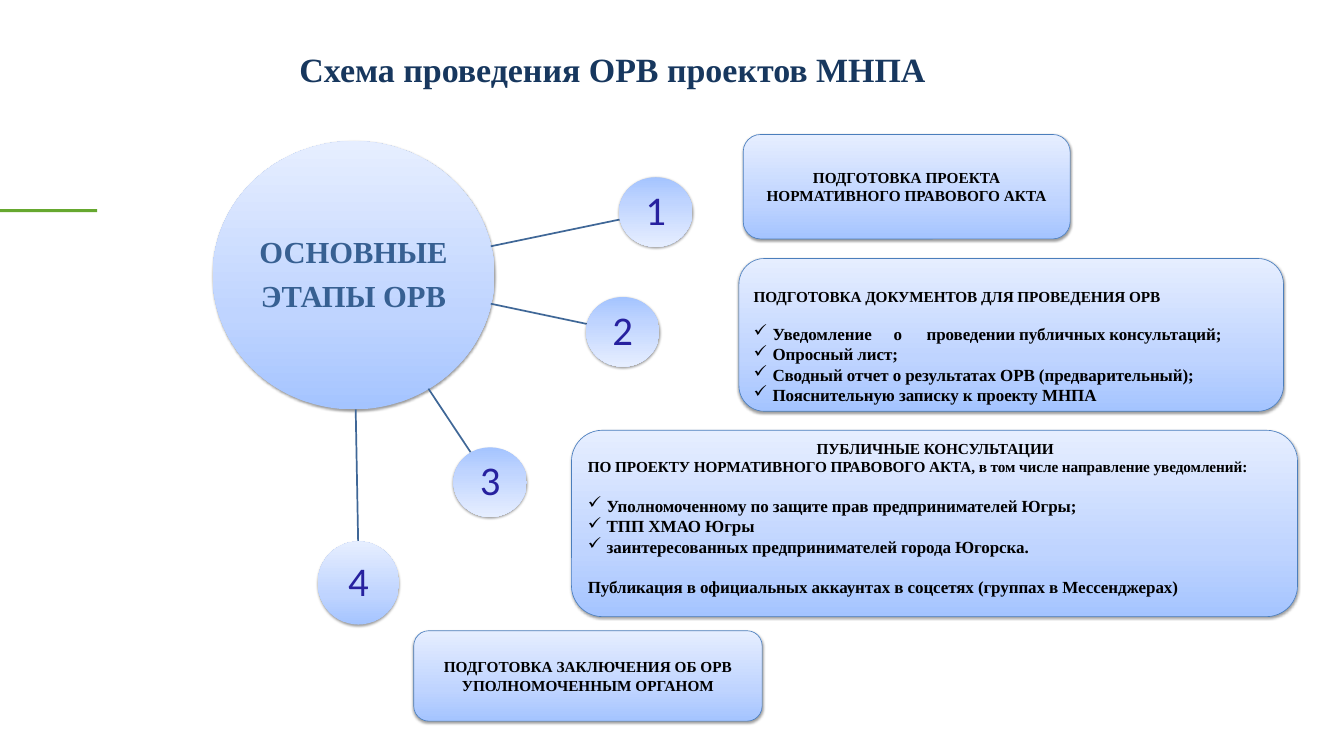
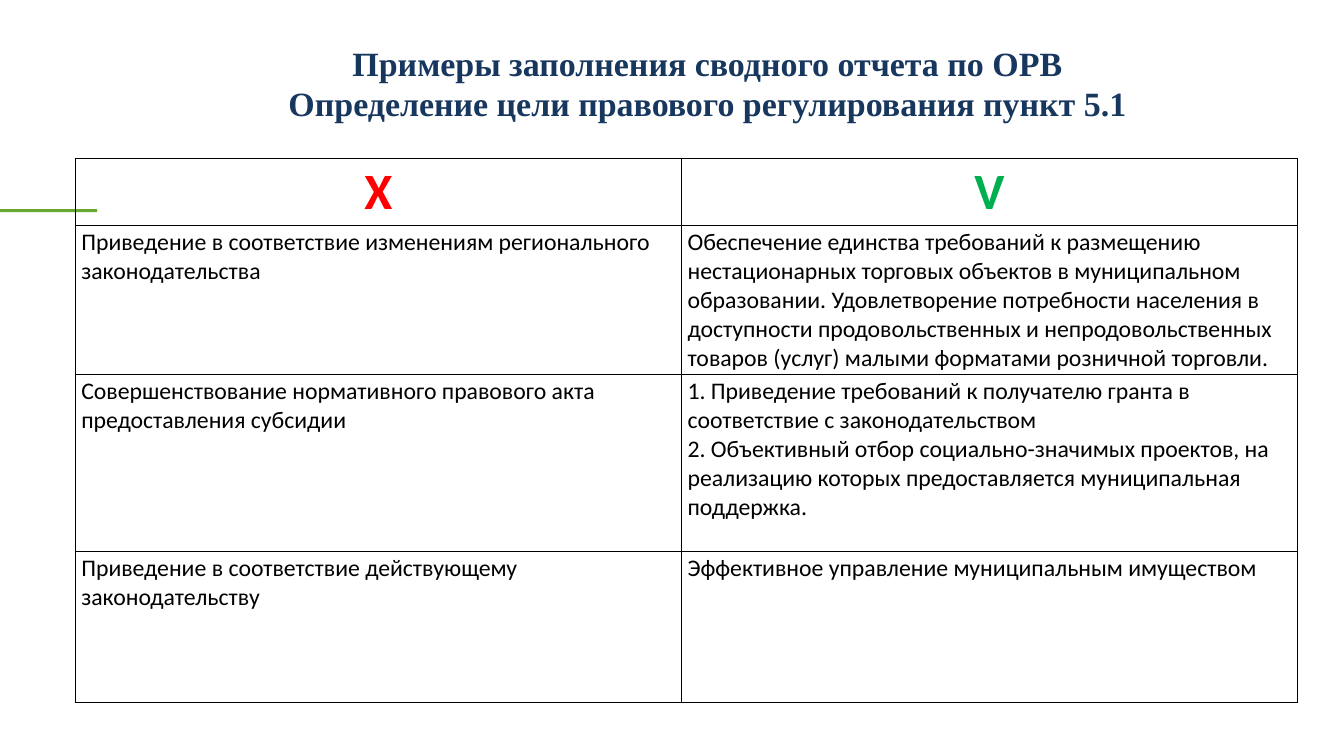
import dataclasses
import pptx
import pptx.util
import pptx.dml.color
import pptx.enum.shapes
import pptx.enum.text
import pptx.oxml
import pptx.oxml.ns
from lxml import etree

PX = 9144  # one px is a hundredth of an inch
NS = 'xmlns:a="http://schemas.openxmlformats.org/drawingml/2006/main"'
SHAPE = pptx.enum.shapes.MSO_SHAPE
ALIGN = pptx.enum.text.PP_ALIGN
ANCHOR = pptx.enum.text.MSO_ANCHOR
UP, DOWN = 270, 90  # gradient runs from dark to light


@dataclasses.dataclass(frozen=True)
class Theme:
    serif: str = "Times New Roman"
    sans: str = "Calibri"
    navy: str = "17375E"
    hub: str = "376092"
    digit: str = "27219F"
    ink: str = "000000"
    red: str = "FF0000"
    green: str = "00B050"
    band: str = "66A82F"
    link: str = "3F6797"
    edge: str = "4B7EBC"
    grad: tuple = ((0, "A4C4FF"), (35, "BFD4FF"), (100, "E6EEFF"))
    title: int = 40
    big: int = 36
    num: int = 48
    head: int = 18
    item: int = 20
    mark: int = 60
    cell: int = 28


T = Theme()


def px(*vals):
    return [pptx.util.Emu(v * PX) for v in vals]


def rgb(code):
    return pptx.dml.color.RGBColor.from_string(code)


def sub(node, tag, **attrs):
    return etree.SubElement(node, pptx.oxml.ns.qn(tag), **attrs)


# Text
def add_run(para, text, size, color, font=T.serif, bold=True, spc=None):
    run = para.add_run()
    run.text = text
    face = run.font
    face.size, face.name, face.bold = pptx.util.Pt(size), font, bold
    face.color.rgb = rgb(color)
    if spc:
        run.font._element.set("spc", str(spc))


def next_para(frame, first):
    return frame.paragraphs[0] if first else frame.add_paragraph()


def fill_text(frame, lines, align, *style, **more):
    for i, line in enumerate(lines):
        para = next_para(frame, i == 0)
        para.alignment = align
        add_run(para, line, *style, **more)


def set_frame(frame, anchor, sides, top=5, bottom=5):
    frame.word_wrap = True
    frame.vertical_anchor = anchor
    frame.margin_left, frame.margin_right = px(sides, sides)
    frame.margin_top, frame.margin_bottom = px(top, bottom)


def add_title(slide, box, lines, align, pad):
    frame = slide.shapes.add_textbox(*px(*box)).text_frame
    set_frame(frame, ANCHOR.TOP, pad, pad // 2, pad // 2)
    fill_text(frame, lines, align, T.title, T.navy)


# Shapes
def add_glow(slide, kind, box, turn=UP):
    shape = slide.shapes.add_shape(kind, *px(*box))
    shape.fill.gradient()
    stops = "".join(
        f'<a:gs pos="{pos * 1000}"><a:srgbClr val="{code}"/></a:gs>'
        for pos, code in T.grad)
    props = shape.element.spPr
    old = props.find(pptx.oxml.ns.qn("a:gradFill"))
    props.replace(old, pptx.oxml.parse_xml(
        f'<a:gradFill {NS} rotWithShape="1"><a:gsLst>{stops}</a:gsLst>'
        f'<a:lin ang="{turn * 60000}" scaled="0"/></a:gradFill>'))
    shape.line.fill.background()
    shape.shadow.inherit = False
    shade = sub(props.find(pptx.oxml.ns.qn("a:effectLst")), "a:outerShdw",
                blurRad="39370", dist="20320", dir="5400000", rotWithShape="0")
    sub(sub(shade, "a:srgbClr", val=T.ink), "a:alpha", val="38000")
    return shape


def add_disc(slide, box, lines, turn, *style, **more):
    frame = add_glow(slide, SHAPE.OVAL, box, turn).text_frame
    set_frame(frame, ANCHOR.MIDDLE, 3, 3, 3)
    fill_text(frame, lines, ALIGN.CENTER, *style, **more)
    for para in frame.paragraphs:
        para.line_spacing = 0.9
        para.space_after = pptx.util.Pt(round(0.35 * style[0]))


def add_card(slide, box, anchor=ANCHOR.MIDDLE, top=5):
    card = add_glow(slide, SHAPE.ROUNDED_RECTANGLE, box)
    card.adjustments[0] = 0.167
    card.line.color.rgb = rgb(T.edge)
    card.line.width = pptx.util.Pt(0.75)
    set_frame(card.text_frame, anchor, 10, top)
    return card.text_frame


def add_label(slide, box, text):
    fill_text(add_card(slide, box), [text], ALIGN.CENTER, T.head, T.ink)


def add_list(slide, box, top, rows):
    """Each row: text, size, ticked, points before, alignment."""
    frame = add_card(slide, box, ANCHOR.TOP, top)
    for i, (text, size, tick, gap, align) in enumerate(rows):
        para = next_para(frame, i == 0)
        props = para._p.get_or_add_pPr()
        left, hang = px(33, -31) if tick else px(2, 0)
        props.set("marL", str(left))
        props.set("indent", str(hang))
        if tick:
            sub(props, "a:buChar", char="✓")
        if "\t" in text:
            tabs = sub(props, "a:tabLst")
            for pos in px(33, 231, 285):
                sub(tabs, "a:tab", pos=str(pos), algn="l")
        para.alignment = align
        if gap:
            para.space_before = pptx.util.Pt(gap)
        add_run(para, text, size, T.ink, spc=-10)


def add_link(slide, ends):
    kind = pptx.enum.shapes.MSO_CONNECTOR.STRAIGHT
    link = slide.shapes.add_connector(kind, *px(*ends))
    link.line.color.rgb = rgb(T.link)
    link.line.width = pptx.util.Pt(2)
    sub(link._element.spPr, "a:effectLst")


# Table
def style_cell(cell):
    cell.margin_left, cell.margin_right = px(10, 10)
    cell.margin_top, cell.margin_bottom = px(5, 0)
    props = cell._tc.get_or_add_tcPr()
    for side in "LRTB":
        edge = sub(props, f"a:ln{side}", w="12700")
        sub(sub(edge, "a:solidFill"), "a:srgbClr", val=T.ink)
    cell.fill.background()


def add_grid(slide, left, top, cols, rows, marks, body):
    box = px(left, top, sum(cols), sum(rows))
    grid = slide.shapes.add_table(len(rows), len(cols), *box).table
    grid.first_row = grid.horz_banding = False
    for col, wide in zip(grid.columns, px(*cols)):
        col.width = wide
    for row, high in zip(grid.rows, px(*rows)):
        row.height = high
    for cell in grid.iter_cells():
        style_cell(cell)
    for c, (mark, color) in enumerate(marks):
        fill_text(grid.cell(0, c).text_frame, [mark], ALIGN.CENTER,
                  T.mark, color, T.sans)
    for r, row in enumerate(body, 1):
        for c, lines in enumerate(row):
            fill_text(grid.cell(r, c).text_frame, lines, ALIGN.LEFT,
                      T.cell, T.ink, T.sans, False)


# Slides
def new_slide(deck):
    slide = deck.slides.add_slide(deck.slide_layouts[6])
    band = slide.shapes.add_shape(SHAPE.RECTANGLE, *px(0, 342, 159, 5))
    band.fill.solid()
    band.fill.fore_color.rgb = rgb(T.band)
    band.line.fill.background()
    band.shadow.inherit = False
    return slide


def build_scheme(deck):
    slide = new_slide(deck)
    # Hub and numbered steps
    add_disc(slide, (348, 231, 461, 439), ["ОСНОВНЫЕ", "ЭТАПЫ ОРВ"], UP,
             T.big, T.hub)
    steps = [
        ((803, 403, 1015, 359), (1013, 290, 120, 114), DOWN),
        ((803, 497, 960, 530), (959, 486, 120, 114), DOWN),
        ((701, 636, 770, 740), (742, 732, 120, 114), DOWN),
        ((582, 670, 586, 886), (520, 886, 133, 136), UP),
    ]
    for num, (ends, box, turn) in enumerate(steps, 1):
        add_link(slide, ends)
        add_disc(slide, box, [str(num)], turn, T.num, T.digit,
                 font=T.sans, bold=False)
    # Step cards
    left, mid = ALIGN.LEFT, ALIGN.CENTER
    add_list(slide, (1209, 423, 891, 250), 35, [
        ("ПОДГОТОВКА ДОКУМЕНТОВ ДЛЯ ПРОВЕДЕНИЯ ОРВ", T.head, False, 0, left),
        ("Уведомление\tо\tпроведении публичных консультаций;",
         T.item, True, 21, left),
        ("Опросный лист;", T.item, True, 0, left),
        ("Сводный отчет о результатах ОРВ (предварительный);",
         T.item, True, 0, left),
        ("Пояснительную записку к проекту МНПА", T.item, True, 0, left),
    ])
    add_label(slide, (1216, 220, 535, 171),
              "ПОДГОТОВКА ПРОЕКТА НОРМАТИВНОГО ПРАВОВОГО АКТА")
    add_list(slide, (935, 704, 1188, 305), 0, [
        ("ПУБЛИЧНЫЕ КОНСУЛЬТАЦИИ", T.head, False, 0, mid),
        ("ПО ПРОЕКТУ НОРМАТИВНОГО ПРАВОВОГО АКТА, "
         "в том числе направление уведомлений:", T.head, False, 0, left),
        ("Уполномоченному по защите прав предпринимателей Югры;",
         T.item, True, 23, left),
        ("ТПП ХМАО Югры", T.item, True, 0, left),
        ("заинтересованных предпринимателей города Югорска.",
         T.item, True, 0, left),
        ("Публикация в официальных аккаунтах в соцсетях "
         "(группах в Мессенджерах)", T.item, False, 23, left),
    ])
    add_label(slide, (677, 1032, 570, 148),
              "ПОДГОТОВКА ЗАКЛЮЧЕНИЯ ОБ ОРВ УПОЛНОМОЧЕННЫМ ОРГАНОМ")
    add_title(slide, (490, 79, 1273, 135),
              ["Схема проведения ОРВ проектов МНПА"], left, 0)


def build_samples(deck):
    slide = new_slide(deck)
    add_title(slide, (388, 64, 1539, 145),
              ["Примеры заполнения сводного отчета по ОРВ",
               "Определение цели правового регулирования пункт 5.1"],
              ALIGN.CENTER, 10)
    body = [
        (["Приведение в соответствие изменениям регионального "
          "законодательства"],
         ["Обеспечение единства требований к размещению нестационарных "
          "торговых объектов в муниципальном образовании. Удовлетворение "
          "потребности населения в доступности продовольственных и "
          "непродовольственных товаров (услуг) малыми форматами розничной "
          "торговли."]),
        (["Совершенствование нормативного правового акта",
          "предоставления субсидии"],
         ["1. Приведение требований к получателю гранта в соответствие с "
          "законодательством",
          "2. Объективный отбор социально-значимых проектов, на реализацию "
          "которых предоставляется муниципальная поддержка."]),
        (["Приведение в соответствие действующему законодательству"],
         ["Эффективное управление муниципальным имуществом"]),
    ]
    add_grid(slide, 123, 259, (992, 1008), (109, 244, 290, 248),
             [("X", T.red), ("V", T.green)], body)


def main():
    deck = pptx.Presentation()
    deck.slide_width, deck.slide_height = px(2199, 1237)
    build_scheme(deck)
    build_samples(deck)
    deck.save("out.pptx")


if __name__ == "__main__":
    main()
